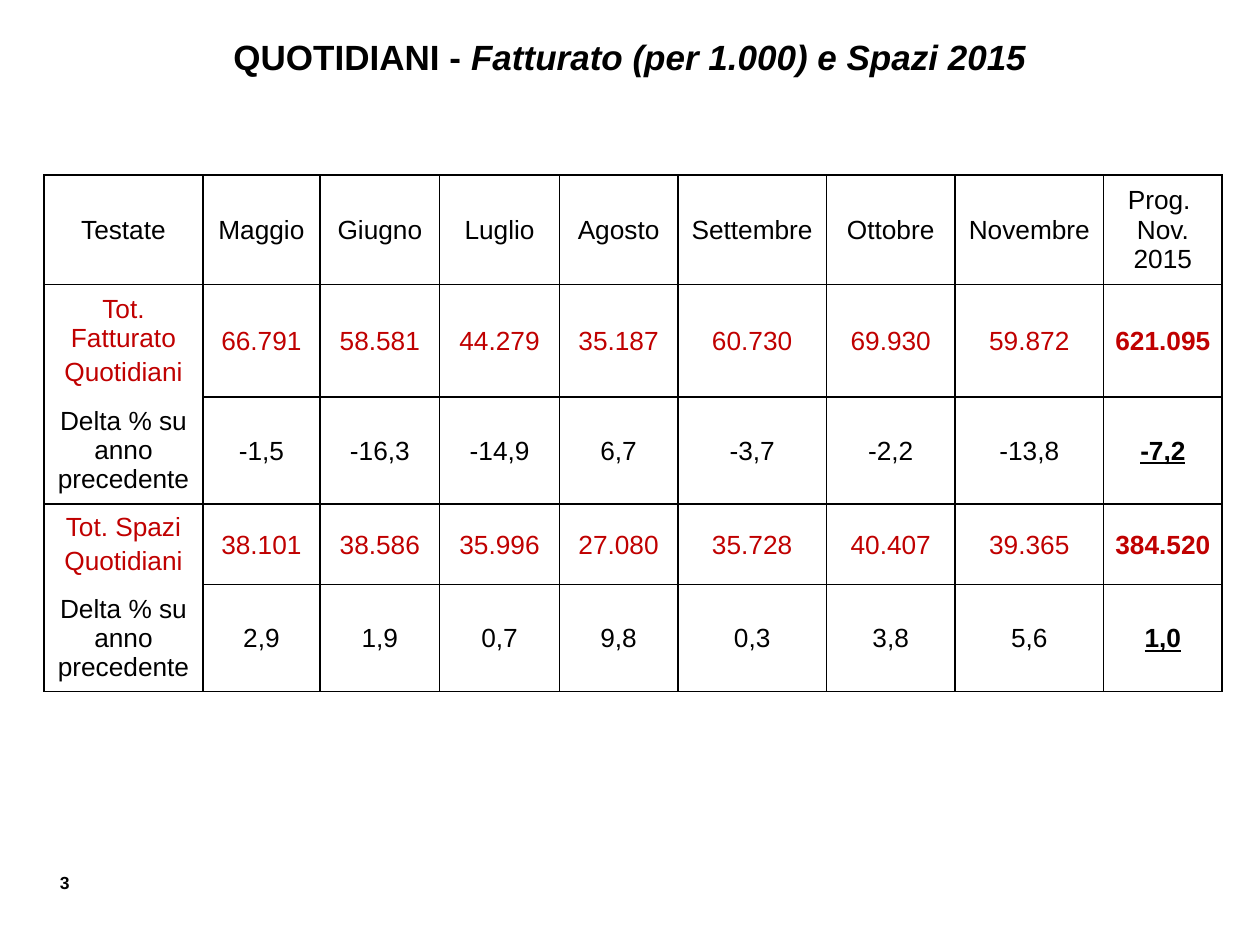
"""Build the slide on newspaper revenue and space sold in 2015."""
from dataclasses import dataclass

from lxml import etree
from pptx import Presentation
from pptx import util as u
from pptx.dml.color import RGBColor
from pptx.enum import text
from pptx.oxml.ns import qn

COLORS = {"ink": "000000", "total": "C00000"}
FONT = "Arial"
BODY_SIZE = 15
COLUMN_WIDTHS = [1.26, 0.93, 0.95, 0.95, 0.94, 1.18, 1.02, 1.18, 0.94]
ALL_SIDES = "LRTB"
LABEL_MARGINS = (0.1, 0.05, 0.1, 0.05)
VALUE_MARGINS = (0.01, 0.01, 0.01, 0)


@dataclass(frozen=True)
class Row:
    """One table row: its label, values, height and styling."""
    label: str
    values: list[str]
    height: float
    color: str = "ink"
    label_sides: str = ALL_SIDES
    header: bool = False
    underline_last: bool = False


DELTA = "Delta % su anno precedente"
ROWS = [
    Row("Testate", ["Maggio", "Giugno", "Luglio", "Agosto", "Settembre", "Ottobre",
                    "Novembre", "Prog. \nNov.\n2015"], 0.87, header=True),
    Row("Tot. Fatturato\nQuotidiani", ["66.791", "58.581", "44.279", "35.187", "60.730",
                                       "69.930", "59.872", "621.095"], 0.89, "total", "LRT"),
    Row(DELTA, ["-1,5", "-16,3", "-14,9", "6,7", "-3,7", "-2,2", "-13,8", "-7,2"],
        0.85, label_sides="LRB", underline_last=True),
    Row("Tot. Spazi\nQuotidiani", ["38.101", "38.586", "35.996", "27.080", "35.728",
                                   "40.407", "39.365", "384.520"], 0.64, "total", "LRT"),
    Row(DELTA, ["2,9", "1,9", "0,7", "9,8", "0,3", "3,8", "5,6", "1,0"],
        0.85, label_sides="LRB", underline_last=True),
]


def set_values(target, values: dict) -> None:
    """Set each named attribute of the target."""
    for name, value in values.items():
        setattr(target, name, value)


def add_span(para, words: str, size: float, color: str = "ink", **style) -> None:
    """Add a formatted run to a paragraph."""
    span = para.add_run()
    span.text = words
    set_values(span.font, {"name": FONT, "size": u.Pt(size), **style})
    span.font.color.rgb = RGBColor.from_string(COLORS[color])


def set_borders(cell, sides: str) -> None:
    """Draw the given sides of a cell and hide the others."""
    properties = cell._tc.get_or_add_tcPr()
    for side in ALL_SIDES:
        line = etree.SubElement(properties, qn(f"a:ln{side}"), w=str(u.Pt(1)))
        if side in sides:
            fill = etree.SubElement(line, qn("a:solidFill"))
            etree.SubElement(fill, qn("a:srgbClr"), val=COLORS["ink"])
        else:
            etree.SubElement(line, qn("a:noFill"))


def fill_cell(cell, words: str, color: str, margins: tuple, sides: str = ALL_SIDES,
              gap: float = 0, **style) -> None:
    """Write centred text in a bordered cell, with a gap between paragraphs."""
    set_borders(cell, sides)
    cell.fill.background()
    names = ("margin_left", "margin_top", "margin_right", "margin_bottom")
    set_values(cell, dict(zip(names, map(u.Inches, margins))))
    cell.vertical_anchor = text.MSO_ANCHOR.MIDDLE
    frame = cell.text_frame
    for index, line in enumerate(words.split("\n")):
        para = frame.add_paragraph() if index else frame.paragraphs[0]
        para.alignment = text.PP_ALIGN.CENTER
        para.space_before = u.Pt(gap if index else 0)
        add_span(para, line, BODY_SIZE, color, **style)


def add_title(page) -> None:
    """Place and write the title."""
    title = page.shapes.title
    set_values(title, {"left": u.Inches(0), "top": u.Inches(0.23),
                       "width": u.Inches(10), "height": u.Inches(0.44)})
    set_values(title.text_frame, {"word_wrap": True, "auto_size": text.MSO_AUTO_SIZE.NONE,
                                  "vertical_anchor": text.MSO_ANCHOR.MIDDLE})
    para = title.text_frame.paragraphs[0]
    para.alignment = text.PP_ALIGN.CENTER
    add_span(para, "QUOTIDIANI - ", 20, bold=True)
    add_span(para, "Fatturato (per 1.000) e Spazi 2015", 20, bold=True, italic=True)


def add_results(page) -> None:
    """Add the table of monthly results."""
    frame = page.shapes.add_table(
        len(ROWS), len(COLUMN_WIDTHS), u.Inches(0.35), u.Inches(1.39),
        u.Inches(sum(COLUMN_WIDTHS)), u.Inches(sum(row.height for row in ROWS)))
    table = frame.table
    set_values(table, {"first_row": False, "horz_banding": False})
    for column, width in zip(table.columns, COLUMN_WIDTHS):
        column.width = u.Inches(width)
    for index, row in enumerate(ROWS):
        table.rows[index].height = u.Inches(row.height)
        fill_cell(table.cell(index, 0), row.label, row.color, LABEL_MARGINS,
                  row.label_sides, gap=3)
        for place, value in enumerate(row.values, 1):
            last = place == len(row.values)
            fill_cell(table.cell(index, place), value, row.color,
                      LABEL_MARGINS if row.header else VALUE_MARGINS,
                      bold=last and not row.header, underline=last and row.underline_last)


def add_page_number(page) -> None:
    """Add the page number at the lower left."""
    box = page.shapes.add_textbox(u.Inches(0.19), u.Inches(6.87), u.Inches(0.46), u.Inches(0.27))
    box.text_frame.word_wrap = True
    para = box.text_frame.paragraphs[0]
    para.alignment = text.PP_ALIGN.RIGHT
    add_span(para, "3", 10, bold=True)


def main() -> None:
    """Build and save the deck."""
    deck = Presentation()
    set_values(deck, {"slide_width": u.Inches(10), "slide_height": u.Inches(7.5)})
    page = deck.slides.add_slide(deck.slide_layouts[5])
    add_title(page)
    add_results(page)
    add_page_number(page)
    deck.save("out.pptx")


if __name__ == "__main__":
    main()
